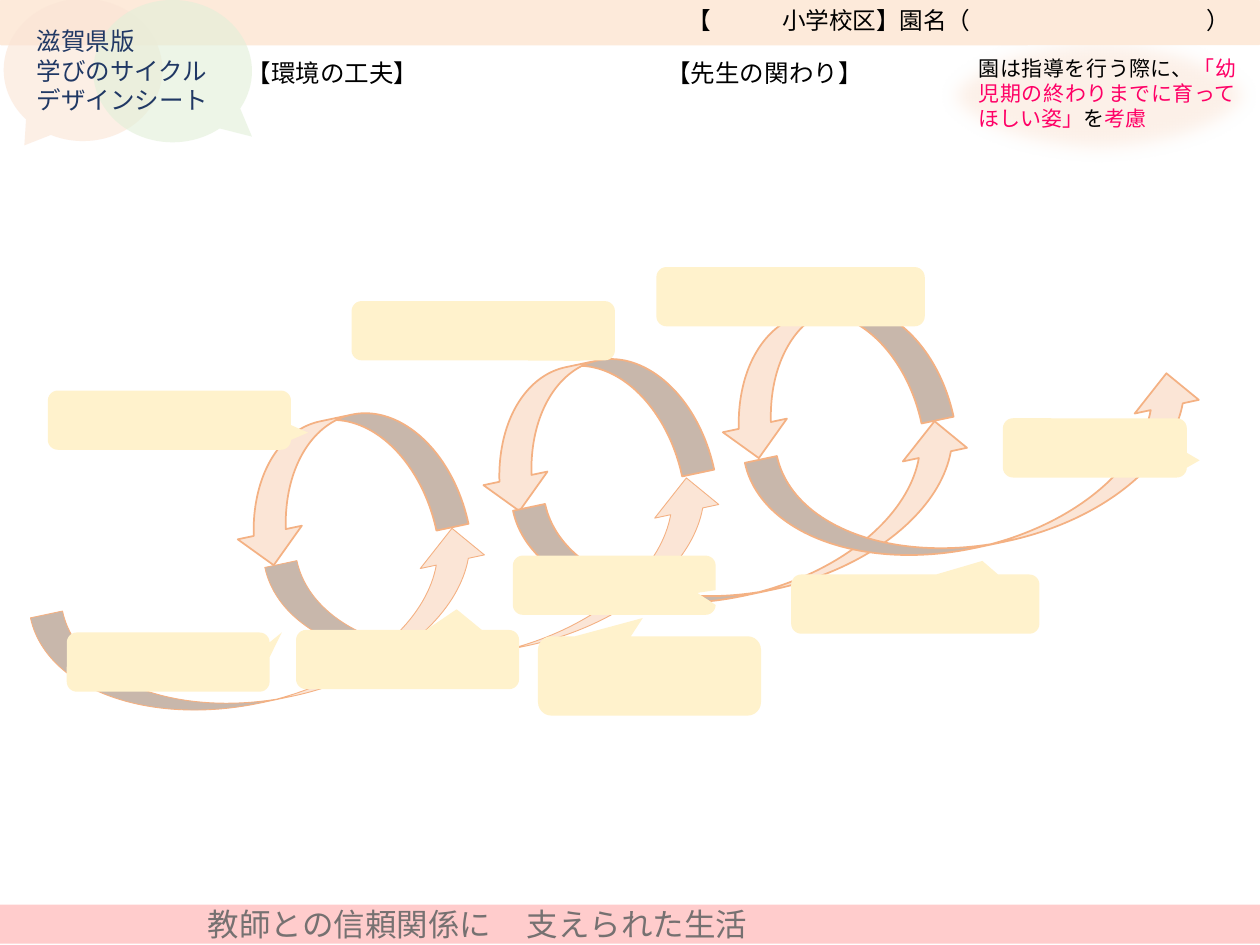
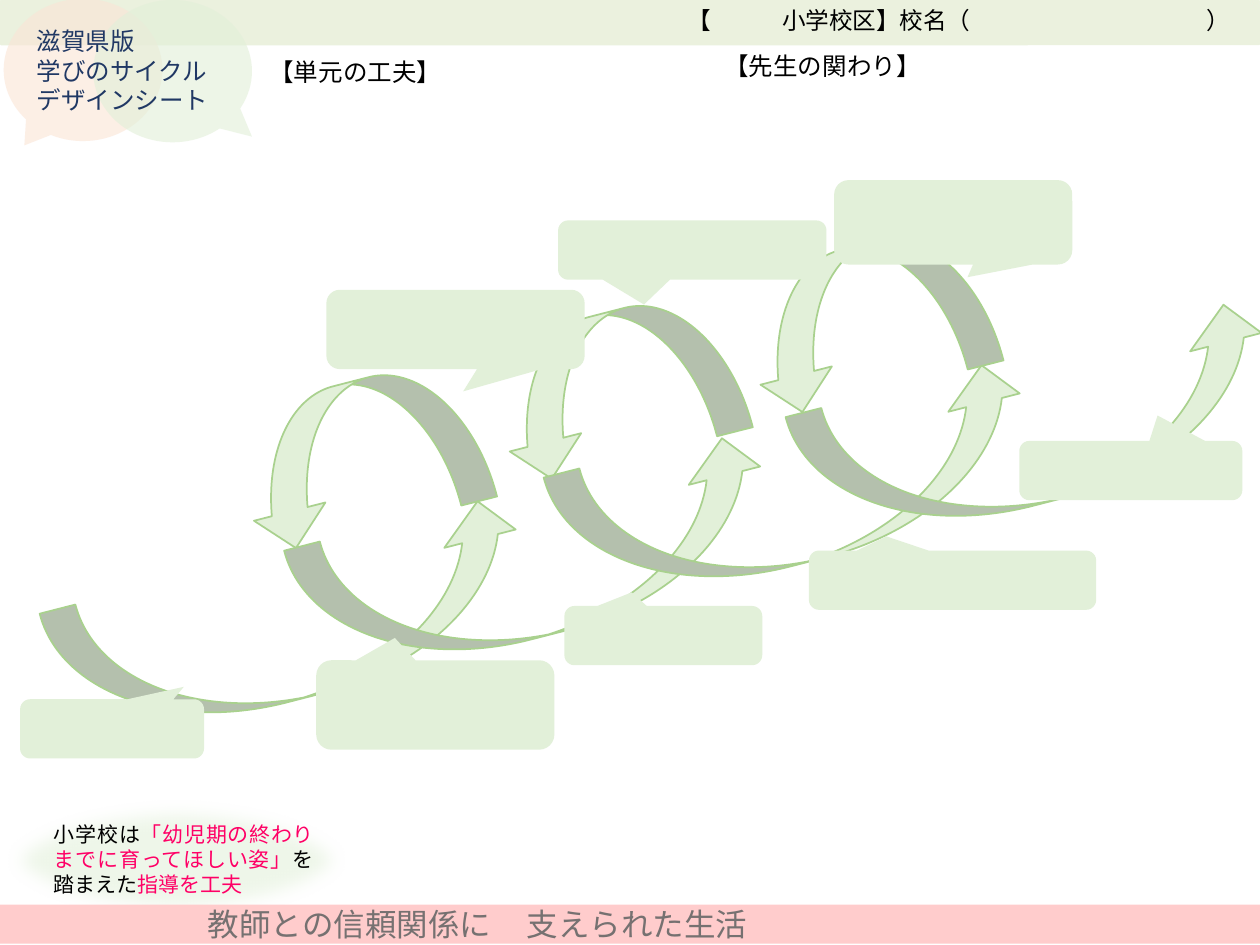
"""Build the two learning cycle design sheets."""
from lxml import etree
from pptx import Presentation
from pptx.dml.color import RGBColor
from pptx.enum.shapes import MSO_SHAPE
from pptx.enum.text import MSO_ANCHOR, MSO_AUTO_SIZE, PP_ALIGN
from pptx.oxml.ns import qn
from pptx.util import Pt

SCALE = 9144
FONT = "Noto Sans CJK JP"
RECT, ROUND, OVAL = MSO_SHAPE.RECTANGLE, MSO_SHAPE.ROUNDED_RECTANGLE, MSO_SHAPE.OVAL
ARROW = MSO_SHAPE.CURVED_DOWN_ARROW
BUBBLE = MSO_SHAPE.ROUNDED_RECTANGULAR_CALLOUT
SPEECH = MSO_SHAPE.OVAL_CALLOUT
TOP, MIDDLE = MSO_ANCHOR.TOP, MSO_ANCHOR.MIDDLE
LEFT, JUSTIFY = PP_ALIGN.LEFT, PP_ALIGN.JUSTIFY
FIXED = MSO_AUTO_SIZE.NONE
TITLE_ONLY = 5

BLACK, PINK, NAVY, GREY = "000000", "FF0066", "203864", "767171"
PEACH, GREEN, ROSE = "FBE5D6", "E2F0D9", "FFCCCC"

SHEETS = [
    dict(
        band="FDEADA", place="【\t小学校区】園名（\t）",
        fill=PEACH, line="F4B183", angle=348, size=(368, 104),
        swirls=[("flipH", 179, 332), ("flipV", 31, 451, 0.5),
                ("flipV", 217, 411, 0.5), ("flipH", 374, 289),
                ("flipV", 414, 366), ("flipH", 564, 247), ("flipV", 598, 328)],
        note="FFF2CC",
        notes=[((53, 502, 161, 47), 0.56, -0.5), ((235, 500, 177, 47), 0.22, -0.85),
               ((38, 310, 193, 47), 0.57, 0.21), ((407, 441, 161, 47), 0.41, 0.13),
               ((427, 505, 177, 63), -0.03, -0.73), ((279, 239, 209, 47), 0.38, 0.51),
               ((628, 456, 197, 47), 0.27, -0.73), ((521, 212, 213, 47), 0.3, 0.5),
               ((796, 332, 146, 47), 0.57, 0.21)],
        glow=(740, 21, 264, 110), hint=(767, 39, 224, 71),
        parts=[("園は指導を行う際に、", BLACK),
               ("「幼児期の終わりまでに育ってほしい姿」", PINK),
               ("を", BLACK), ("考慮", PINK)],
        heads=[("【環境の工夫】", 186, 41), ("【先生の関わり】", 519, 41)]),
    dict(
        band="EBF1DE", place="【\t小学校区】校名（\t）",
        fill=GREEN, line="A9D18E", angle=345.6, size=(388, 117),
        swirls=[("flipH", 189, 303), ("flipV", 40, 437), ("flipV", 234, 387),
                ("flipH", 392, 248), ("flipV", 440, 329), ("flipH", 591, 195),
                ("flipV", 632, 281)],
        note=GREEN,
        notes=[((16, 555, 146, 47), 0.39, -0.71), ((251, 524, 189, 71), -0.17, -0.75),
               ((662, 143, 189, 67), 0.06, 0.65), ((259, 230, 205, 63), 0.03, 0.78),
               ((448, 481, 157, 47), -0.16, -0.73), ((443, 175, 213, 47), -0.18, 0.92),
               ((642, 437, 228, 47), -0.23, -0.74), ((809, 350, 177, 47), 0.12, -0.93)],
        glow=(-3, 633, 286, 99), hint=(33, 647, 226, 71),
        parts=[("小学校は", BLACK),
               ("「幼児期の終わりまでに育ってほしい姿」", PINK),
               ("を踏まえた", BLACK), ("指導を工夫", PINK)],
        heads=[("【単元の工夫】", 204, 40), ("【先生の関わり】", 565, 36)]),
]


def px(value):
    """Turn px into EMU."""
    return int(value * SCALE)


def rgb(code):
    """Turn a hex string into a colour."""
    return RGBColor.from_string(code)


class Sheet:
    """Hold the style and the current slide."""

    def __init__(self, deck):
        """Start a slide with a title."""
        self.slide = deck.slides.add_slide(deck.slide_layouts[TITLE_ONLY])
        self.shapes = self.slide.shapes

    def shape(self, kind, box, fill, adjust=(), alpha=None):
        """Add a filled preset shape without a line."""
        item = self.shapes.add_shape(kind, *map(px, box))
        item.shadow.inherit = False
        item.fill.solid()
        item.fill.fore_color.rgb = rgb(fill)
        item.line.fill.background()
        for i, value in enumerate(adjust):
            item.adjustments[i] = value
        if alpha:
            tone = item._element.spPr.find(".//" + qn("a:srgbClr"))
            etree.SubElement(tone, qn("a:alpha"), val=str(alpha * 1000))
        return item

    def style(self, item, size, color, align=LEFT, anchor=TOP, inset=(10, 10), tabs=()):
        """Format the text of a shape."""
        frame = item.text_frame
        frame.word_wrap = True
        frame.auto_size = FIXED
        frame.vertical_anchor = anchor
        frame.margin_left, frame.margin_right = map(px, inset)
        frame.margin_top = frame.margin_bottom = px(5)
        for para in frame.paragraphs:
            para.alignment = align
            para.line_spacing = Pt(size * 1.2)
            if tabs:
                stops = etree.SubElement(para._p.get_or_add_pPr(), qn("a:tabLst"))
                for stop in tabs:
                    etree.SubElement(stops, qn("a:tab"), pos=str(px(stop)), algn="l")
            for run in para.runs:
                font = run.font
                font.name, font.size, font.bold = FONT, Pt(size), False
                font.color.rgb = rgb(color)
                etree.SubElement(run._r.get_or_add_rPr(), qn("a:ea"), typeface=FONT)

    def text(self, words, box, size, color, **options):
        """Add a text box."""
        item = self.shapes.add_textbox(*map(px, box))
        item.text_frame.text = words
        self.style(item, size, color, **options)

    def swirl(self, look, flip, x, y, weight=1):
        """Add a tilted curved arrow."""
        wide, high = look["size"]
        if flip == "flipH":
            wide //= 2
        item = self.shape(ARROW, (x, y, wide, high), look["fill"])
        item.rotation = look["angle"]
        item._element.spPr.get_or_add_xfrm().set(flip, "1")
        item.line.color.rgb = rgb(look["line"])
        item.line.width = Pt(weight)

    def hint(self, glow, box, parts, fill):
        """Add a two-coloured hint on a soft oval."""
        oval = self.shape(OVAL, glow, fill, alpha=54)
        effects = oval._element.spPr.find(qn("a:effectLst"))
        etree.SubElement(effects, qn("a:softEdge"), rad=str(px(14)))
        item = self.shapes.add_textbox(*map(px, box))
        para = item.text_frame.paragraphs[0]
        for words, _ in parts:
            para.add_run().text = words
        self.style(item, 12, BLACK, align=JUSTIFY)
        for run, (_, color) in zip(para.runs, parts):
            run.font.color.rgb = rgb(color)

    def band(self, words, fill):
        """Add the top band with its form line."""
        self.shape(ROUND, (0, 0, 1000, 36), fill, [0.03])
        self.text(words, (536, 0, 476, 33), 13.5, BLACK, tabs=(75, 412))

    def foot(self):
        """Add the bottom band."""
        item = self.shape(RECT, (0, 718, 1004, 31), ROSE)
        item.text_frame.text = "教師との信頼関係に\t支えられた生活"
        self.style(item, 18, GREY, anchor=MIDDLE, inset=(165, 10), tabs=(253,))

    def title(self):
        """Place the title on two speech ovals."""
        self.shape(SPEECH, (3, -1, 126, 113), PEACH, (-0.37, 0.53), 61)
        self.shape(SPEECH, (74, 0, 126, 113), GREEN, (0.5, 0.46), 62)
        item = self.shapes.title
        item.left, item.top, item.width, item.height = map(px, (19, 16, 192, 80))
        item.text_frame.text = "滋賀県版\n学びのサイクル\nデザインシート"
        self.style(item, 14, NAVY, align=JUSTIFY)
        self.shapes._spTree.append(item._element)

    def head(self, words, x, y):
        """Add a section heading."""
        self.text(words, (x, y, 501, 34), 14, BLACK, align=JUSTIFY, inset=(10, 4))


def main():
    """Build and save the sheets."""
    deck = Presentation()
    deck.slide_width, deck.slide_height = px(1000), px(750)
    for data in SHEETS:
        sheet = Sheet(deck)
        for swirl in data["swirls"]:
            sheet.swirl(data, *swirl)
        for box, x, y in data["notes"]:
            sheet.shape(BUBBLE, box, data["note"], (x, y, 0.17))
        sheet.hint(data["glow"], data["hint"], data["parts"], data["fill"])
        sheet.foot()
        sheet.band(data["place"], data["band"])
        sheet.title()
        for head in data["heads"]:
            sheet.head(*head)
    deck.save("out.pptx")


if __name__ == "__main__":
    main()
